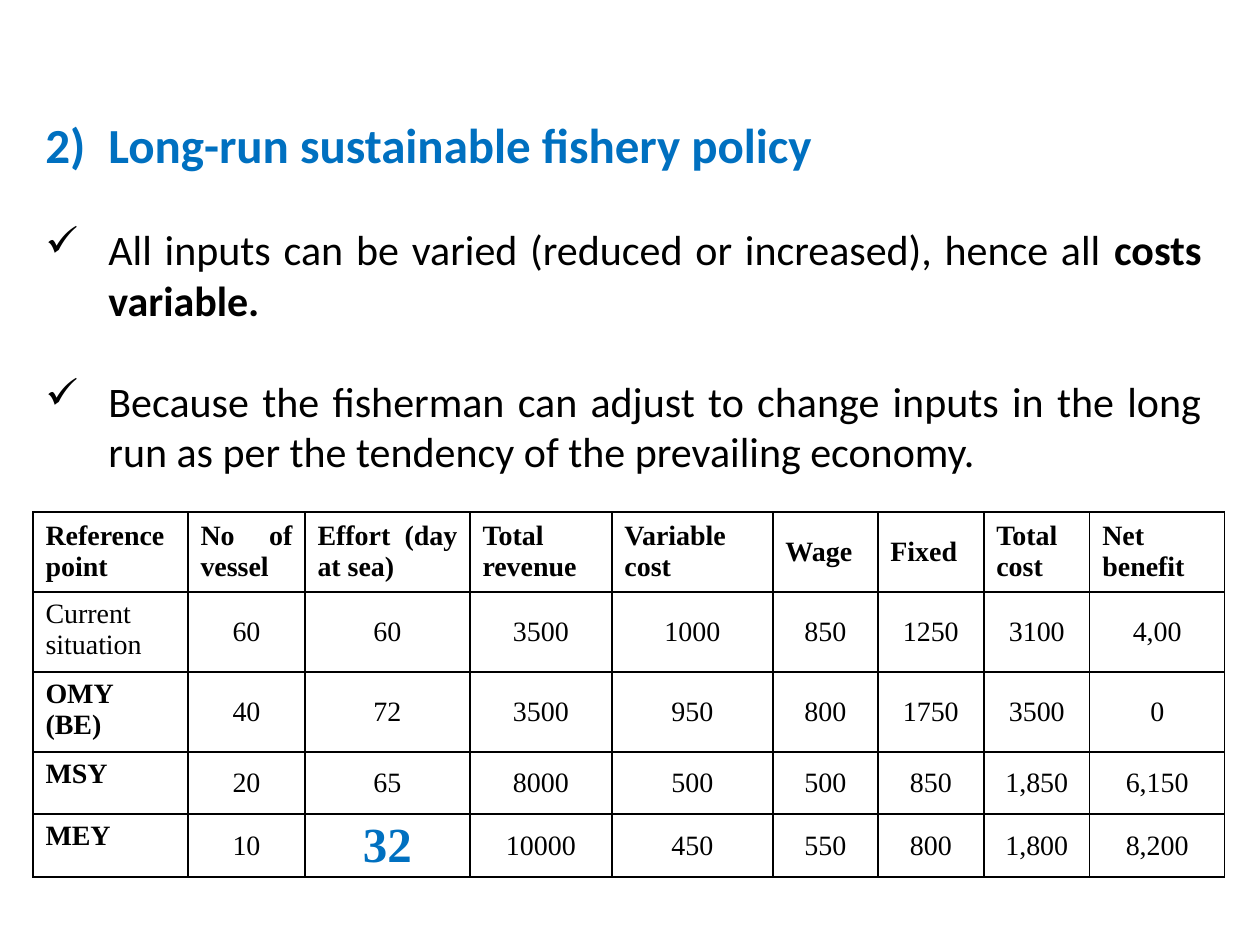
from dataclasses import dataclass

from lxml.etree import SubElement
from pptx import Presentation
from pptx.dml.color import RGBColor as RGB
from pptx.enum.text import MSO_ANCHOR as Anchor, MSO_AUTO_SIZE as AutoSize, PP_ALIGN as Align
from pptx.oxml import parse_xml
from pptx.oxml.ns import nsdecls, qn
from pptx.util import Pt

PX = 914400 // 126


@dataclass(frozen=True)
class Theme:
    ink: RGB = RGB(0x00, 0x00, 0x00)
    accent: RGB = RGB(0x00, 0x70, 0xC0)
    body_font: str = "Calibri"
    table_font: str = "Times New Roman"
    heading: int = 28
    body: int = 24
    table: int = 16
    paragraph_gap: int = 29
    border: int = 1


theme = Theme()


def write(paragraph, text, font=theme.body_font, size=theme.body, color=theme.ink,
          bold=False, align=Align.JUSTIFY):
    paragraph.alignment = align
    run = paragraph.add_run()
    run.text = text
    run.font.name = font
    run.font.size = Pt(size)
    run.font.color.rgb = color
    run.font.bold = bold


def add_bullet(paragraph, tag, **attributes):
    """Give the paragraph a hanging indent and a bullet element such as a:buChar."""
    properties = paragraph._p.get_or_add_pPr()
    properties.set("marL", str(63 * PX))
    properties.set("indent", str(-63 * PX))
    SubElement(properties, qn(tag), **attributes)


prs = Presentation()
prs.slide_width, prs.slide_height = 1260 * PX, 945 * PX
slide = prs.slides.add_slide(prs.slide_layouts[6])

# Policy heading and its points
policy = slide.shapes.add_textbox(33 * PX, 108 * PX, 1181 * PX, 378 * PX).text_frame
policy.word_wrap = True
policy.auto_size = AutoSize.SHAPE_TO_FIT_TEXT

heading = policy.paragraphs[0]
write(heading, "Long-run sustainable fishery policy",
      size=theme.heading, color=theme.accent, bold=True)
add_bullet(heading, "a:buAutoNum", type="arabicParenR", startAt="2")

points = [
    [("All inputs can be varied (reduced or increased), hence all ", False),
     ("costs variable.", True)],
    [("Because the fisherman can adjust to change inputs in the long run "
      "as per the tendency of the prevailing economy.", False)],
]
for parts in points:
    point = policy.add_paragraph()
    point.space_before = Pt(theme.paragraph_gap)
    for text, bold in parts:
        write(point, text, bold=bold)
    add_bullet(point, "a:buChar", char="✓")

# Reference points compared
records = [
    ["Reference point", "No of vessel", "Effort (day at sea)", "Total revenue",
     "Variable cost", "Wage", "Fixed", "Total cost", "Net benefit"],
    ["Current situation", "60", "60", "3500", "1000", "850", "1250", "3100", "4,00"],
    ["OMY (BE)", "40", "72", "3500", "950", "800", "1750", "3500", "0"],
    ["MSY", "20", "65", "8000", "500", "500", "850", "1,850", "6,150"],
    ["MEY", "10", "32", "10000", "450", "550", "800", "1,800", "8,200"],
]
column_widths = [155, 117, 165, 142, 161, 105, 106, 106, 135]
row_heights = [80, 80, 80, 62, 63]
best_effort = (4, 2)

table = slide.shapes.add_table(
    len(records), len(column_widths), 33 * PX, 512 * PX,
    sum(column_widths) * PX, sum(row_heights) * PX).table
table.horz_banding = False
for column, width in zip(table.columns, column_widths):
    column.width = width * PX
for row, height in zip(table.rows, row_heights):
    row.height = height * PX

for r, record in enumerate(records):
    for c, text in enumerate(record):
        cell = table.cell(r, c)
        cell.fill.background()
        is_header, is_label = r == 0, c == 0
        cell.vertical_anchor = Anchor.TOP if is_label and not is_header else Anchor.MIDDLE
        look = {"font": theme.table_font, "size": theme.table}
        if is_header or is_label:
            look["bold"] = text != "Current situation"
        else:
            look["align"] = Align.CENTER
            cell.margin_left = cell.margin_right = cell.margin_top = PX
            cell.margin_bottom = 0
        if (r, c) == best_effort:
            look.update(size=theme.heading, color=theme.accent, bold=True)
        write(cell.text_frame.paragraphs[0], text, **look)

        for position, side in enumerate(("lnL", "lnR", "lnT", "lnB")):
            cell._tc.get_or_add_tcPr().insert(position, parse_xml(
                f'<a:{side} {nsdecls("a")} w="{Pt(theme.border)}"><a:solidFill>'
                f'<a:srgbClr val="{theme.ink}"/></a:solidFill></a:{side}>'))

prs.save("out.pptx")
